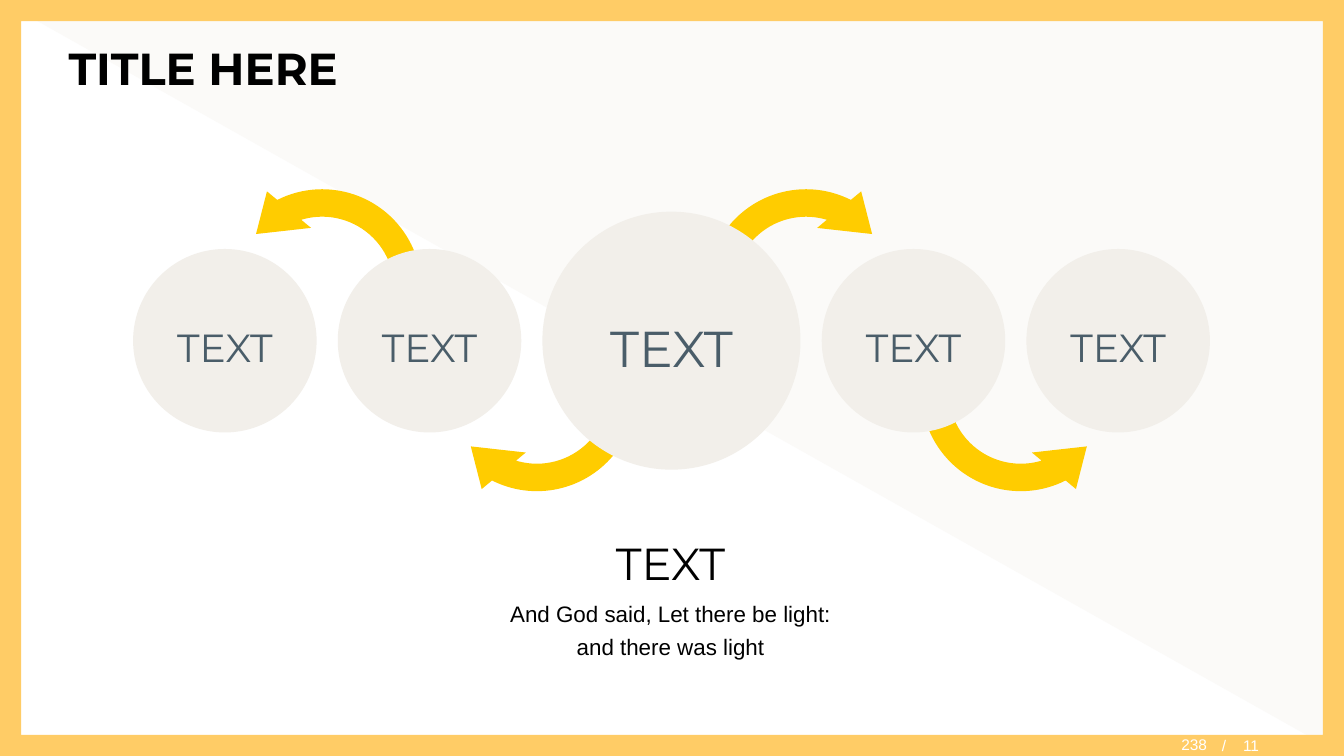
from lxml.etree import SubElement
from pptx import Presentation
from pptx.dml.color import RGBColor
from pptx.enum.shapes import MSO_SHAPE
from pptx.enum.text import MSO_ANCHOR, MSO_AUTO_SIZE, PP_ALIGN
from pptx.oxml.ns import qn
from pptx.util import Inches, Pt

COLORS = {
    "frame": "FFCC66",
    "triangle": "FBFAF8",
    "arrow": "FFCC00",
    "circle": "F2EFEA",
    "label": "4A5D69",
    "black": "000000",
    "white": "FFFFFF",
}
SLIDE_WIDTH, SLIDE_HEIGHT = 13.33, 7.5
CENTER_Y = 3.38
CIRCLE_GAP = 0.21
# Diameter, label width, label height, label size
SMALL = (1.82, 1.59, 0.78, 28)
LARGE = (2.56, 1.97, 0.97, 36)
CIRCLES = [SMALL, SMALL, LARGE, SMALL, SMALL]
# Left, top, rotation, flips
ARROWS = [
    (6.86, 1.73, 315, ()),
    (8.99, 2.75, 45, ("flipV",)),
    (4.19, 2.75, 315, ("flipH", "flipV")),
    (2.06, 1.73, 45, ("flipH",)),
]
ARROW_SIZE = 2.27
ARROW_ADJUSTMENTS = (0.12, 16.595, 202.616, 143.239, 0.125)
BODY_SPACING = {
    "alignment": PP_ALIGN.CENTER,
    "line_spacing": 1.2,
    "space_before": Pt(2),
    "space_after": Pt(2),
}


def set_attributes(target, values):
    for name, value in values.items():
        setattr(target, name, value)


def add_filled_shape(slide, kind, box, color, rotation=0, adjustments=()):
    shape = slide.shapes.add_shape(kind, *map(Inches, box))
    shape.shadow.inherit = False
    shape.fill.solid()
    shape.fill.fore_color.rgb = RGBColor.from_string(COLORS[color])
    shape.line.fill.background()
    shape.rotation = rotation
    for index, value in enumerate(adjustments):
        shape.adjustments[index] = value
    return shape


def write_paragraph(paragraph, text, size, font, color, bold=False, spacing=None):
    set_attributes(paragraph, spacing or {})
    run = paragraph.add_run()
    run.text = text
    set_attributes(run.font, {"size": Pt(size), "name": font, "bold": bold})
    run.font.color.rgb = RGBColor.from_string(COLORS[color])


def add_text_frame(slide, box, frame_format):
    frame = slide.shapes.add_textbox(*map(Inches, box)).text_frame
    set_attributes(frame, {"word_wrap": True, **frame_format})
    return frame


def add_background(slide):
    full_slide = (0, 0, SLIDE_WIDTH, SLIDE_HEIGHT)
    add_filled_shape(slide, MSO_SHAPE.RIGHT_TRIANGLE, full_slide, "triangle", 180)
    add_filled_shape(slide, MSO_SHAPE.FRAME, full_slide, "frame", adjustments=(0.028,))


def add_title(slide, text):
    title = slide.shapes.title
    position = {"left": 0.58, "top": 0.28, "width": 12.18, "height": 0.79}
    set_attributes(title, {name: Inches(value) for name, value in position.items()})
    set_attributes(title.text_frame, {
        "vertical_anchor": MSO_ANCHOR.MIDDLE,
        "auto_size": MSO_AUTO_SIZE.NONE,
    })
    write_paragraph(title.text_frame.paragraphs[0], text, 32, "Montserrat", "black",
                    bold=True, spacing={"alignment": PP_ALIGN.LEFT})
    # Bring the title in front of the background
    title._element.getparent().append(title._element)


def add_arrow(slide, left, top, rotation, flips):
    arrow = add_filled_shape(slide, MSO_SHAPE.CIRCULAR_ARROW,
                             (left, top, ARROW_SIZE, ARROW_SIZE), "arrow",
                             rotation, ARROW_ADJUSTMENTS)
    for flip in flips:
        arrow._element.spPr.find(qn("a:xfrm")).set(flip, "1")


def add_circle(slide, left, diameter):
    add_filled_shape(slide, MSO_SHAPE.OVAL,
                     (left, CENTER_Y - diameter / 2, diameter, diameter), "circle")


def add_label(slide, center_x, width, height, size):
    frame = add_text_frame(
        slide, (center_x - width / 2, CENTER_Y + 0.01 - height / 2, width, height),
        {"word_wrap": False, "auto_size": MSO_AUTO_SIZE.SHAPE_TO_FIT_TEXT,
         "vertical_anchor": MSO_ANCHOR.MIDDLE})
    write_paragraph(frame.paragraphs[0], "TEXT", size, "Montserrat", "label",
                    spacing=BODY_SPACING)


def add_circle_row(slide):
    left = 1.32
    centers = []
    for diameter, *_ in CIRCLES:
        add_circle(slide, left, diameter)
        centers.append(left + diameter / 2)
        left += diameter + CIRCLE_GAP
    for center_x, (_, *label) in zip(centers, CIRCLES):
        add_label(slide, center_x, *label)


def add_caption(slide):
    frame = add_text_frame(slide, (4.77, 5.16, 3.76, 1.69),
                           {"auto_size": MSO_AUTO_SIZE.SHAPE_TO_FIT_TEXT})
    write_paragraph(frame.paragraphs[0], "TEXT", 32, "Montserrat", "black",
                    spacing=BODY_SPACING)
    write_paragraph(frame.add_paragraph(),
                    "And God said, Let there be light: and there was light",
                    16, "Arial", "black", spacing=BODY_SPACING)


def add_page_number(slide):
    middle = {"vertical_anchor": MSO_ANCHOR.MIDDLE}
    total = add_text_frame(slide, (12.02, 7.3, 1.31, 0.18), middle).paragraphs[0]
    write_paragraph(total, "/\t11", 11, "Arial", "white")
    # Tab stop between the slash and the total
    tab_list = SubElement(total._p.get_or_add_pPr(), qn("a:tabLst"))
    SubElement(tab_list, qn("a:tab"), pos=str(Inches(0.21)), algn="l")

    current = add_text_frame(slide, (9.48, 7.32, 2.59, 0.18),
                             {**middle, "margin_top": 0, "margin_bottom": Inches(0.05)})
    write_paragraph(current.paragraphs[0], "238", 11, "Arial", "white",
                    spacing={"alignment": PP_ALIGN.RIGHT})


def main():
    presentation = Presentation()
    presentation.slide_width = Inches(SLIDE_WIDTH)
    presentation.slide_height = Inches(SLIDE_HEIGHT)
    slide = presentation.slides.add_slide(presentation.slide_layouts[5])

    add_background(slide)
    add_title(slide, "TITLE HERE")
    for arrow in ARROWS:
        add_arrow(slide, *arrow)
    add_circle_row(slide)
    add_caption(slide)
    add_page_number(slide)

    presentation.save("out.pptx")


if __name__ == "__main__":
    main()
